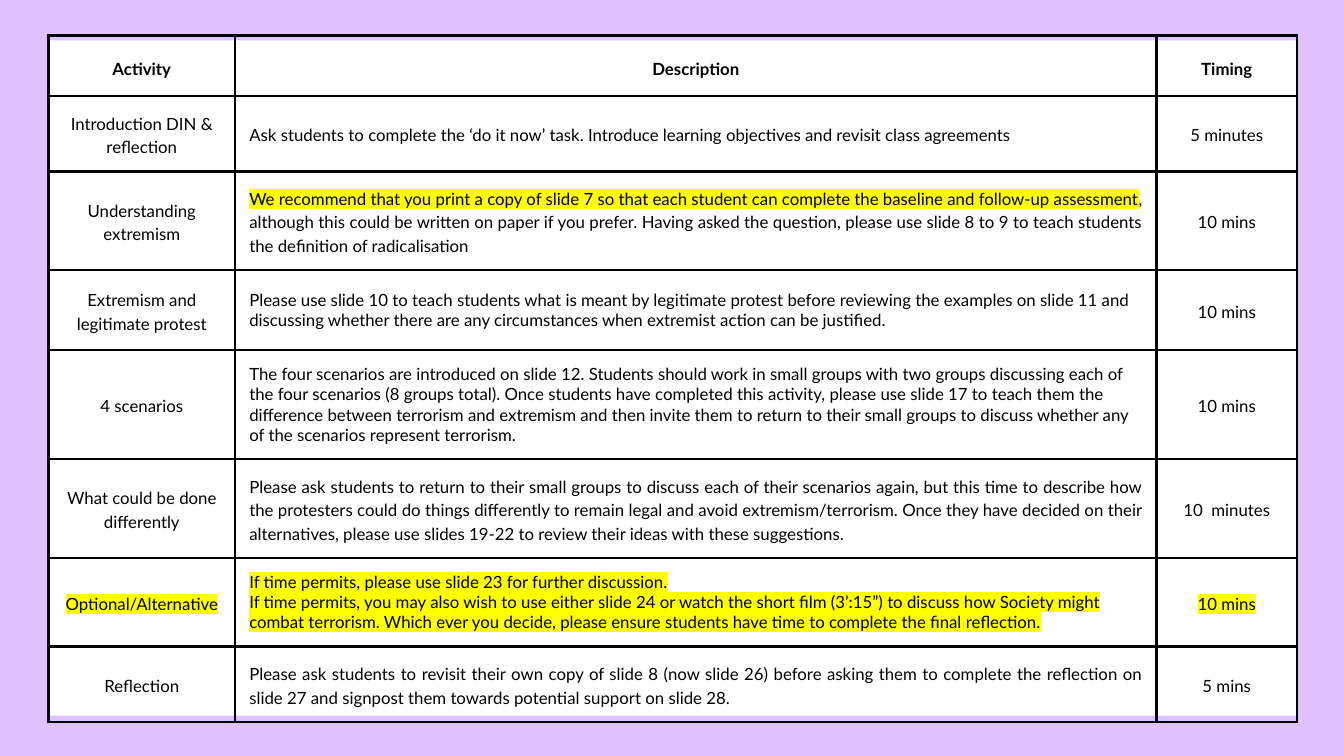
from dataclasses import dataclass
from lxml.etree import SubElement
from pptx import Presentation
from pptx.dml.color import RGBColor
from pptx.enum.shapes import MSO_SHAPE
from pptx.enum.text import MSO_ANCHOR, PP_ALIGN
from pptx.oxml import parse_xml
from pptx.oxml.ns import nsdecls, qn
from pptx.util import Inches, Pt


@dataclass(frozen=True)
class Theme:
    back: str = "E0C1FF"
    panel: str = "FFFFFF"
    ink: str = "000000"
    mark: str = "FFFF00"
    font: str = "Lato"
    size: float = 18
    head_gap: float = 28
    body_gap: float = 25.2
    rule: float = 3
    inset: float = 0.21


THEME = Theme()
WIDTH, HEIGHT = 20, 11.25
PANEL = (0.7, 0.6, 18.6, 10.05)
GRID = (0.72, 0.53, 18.58, 10.07)
COLS = (2.78, 13.71, 2.09)
HEAD, LOW, HIGH = 0.9, 0.85, 1.19
MID, LEFT, FULL = PP_ALIGN.CENTER, PP_ALIGN.LEFT, PP_ALIGN.JUSTIFY

# Row height, alignment of the description, then the three cells.
# Text between asterisks is highlighted.
PLAN = [
    (HEAD, MID, "Activity", "Description", "Timing"),
    (LOW, FULL, "Introduction DIN & reflection",
     "Ask students to complete the ‘do it now’ task. Introduce learning "
     "objectives and revisit class agreements", "5 minutes"),
    (LOW, FULL, "Understanding extremism",
     "*We recommend that you print a copy of slide 7 so that each student can "
     "complete the baseline and follow-up assessment*, although this could be "
     "written on paper if you prefer. Having asked the question, please use "
     "slide 8 to 9 to teach students the definition of radicalisation",
     "10 mins"),
    (HIGH, LEFT, "Extremism and legitimate protest",
     "Please use slide 10 to teach students what is meant by legitimate "
     "protest before reviewing the examples on slide 11 and discussing whether "
     "there are any circumstances when extremist action can be justified.",
     "10 mins"),
    (HIGH, LEFT, "4 scenarios",
     "The four scenarios are introduced on slide 12. Students should work in "
     "small groups with two groups discussing each of the four scenarios (8 "
     "groups total). Once students have completed this activity, please use "
     "slide 17 to teach them the difference between terrorism and extremism "
     "and then invite them to return to their small groups to discuss whether "
     "any of the scenarios represent terrorism.", "10 mins"),
    (HIGH, FULL, "What could be done differently",
     "Please ask students to return to their small groups to discuss each of "
     "their scenarios again, but this time to describe how the protesters "
     "could do things differently to remain legal and avoid "
     "extremism/terrorism. Once they have decided on their alternatives, "
     "please use slides 19-22 to review their ideas with these suggestions.",
     "10  minutes"),
    (LOW, LEFT, "*Optional/Alternative*",
     "*If time permits, please use slide 23 for further discussion.*\n"
     "*If time permits, you may also wish to use either slide 24 or watch the "
     "short film (3’:15”) to discuss how Society might combat terrorism. Which "
     "ever you decide, please ensure students have time to complete the final "
     "reflection.*", "*10 mins*"),
    (LOW, FULL, "Reflection",
     "Please ask students to revisit their own copy of slide 8 (now slide 26) "
     "before asking them to complete the reflection on slide 27 and signpost "
     "them towards potential support on slide 28.", "5 mins"),
]


def paint(fill, color):
    fill.solid()
    fill.fore_color.rgb = RGBColor.from_string(color)


def mark(run):
    """Highlight a run whose font is already set."""
    glow = parse_xml(f'<a:highlight {nsdecls("a")}>'
                     f'<a:srgbClr val="{THEME.mark}"/></a:highlight>')
    run.font._element.find(qn("a:latin")).addprevious(glow)


def write(para, text, bold):
    for i, part in enumerate(text.split("*")):
        if not part:
            continue
        run = para.add_run()
        run.text = part
        font = run.font
        font.name, font.size, font.bold = THEME.font, Pt(THEME.size), bold
        paint(font.fill, THEME.ink)
        if i % 2:
            mark(run)


def rule(cell):
    """Draw all four borders of a cell."""
    props = cell._tc.get_or_add_tcPr()
    for side in "LRTB":
        line = SubElement(props, qn(f"a:ln{side}"), w=str(Pt(THEME.rule)))
        fill = SubElement(line, qn("a:solidFill"))
        SubElement(fill, qn("a:srgbClr"), val=THEME.ink)


def fill_cell(cell, text, align, head):
    rule(cell)
    cell.fill.background()
    cell.vertical_anchor = MSO_ANCHOR.MIDDLE
    cell.margin_left = cell.margin_right = Inches(THEME.inset)
    cell.margin_top = cell.margin_bottom = Inches(THEME.inset)
    frame = cell.text_frame
    for i, line in enumerate(text.split("\n")):
        para = frame.add_paragraph() if i else frame.paragraphs[0]
        para.alignment = align
        if align != LEFT:
            para.line_spacing = Pt(THEME.head_gap if head else THEME.body_gap)
        write(para, line, head)


def add_panel(slide, box):
    panel = slide.shapes.add_shape(MSO_SHAPE.RECTANGLE, *map(Inches, box))
    panel.shadow.inherit = False
    paint(panel.fill, THEME.panel)
    panel.line.fill.background()


def add_plan(slide, box):
    frame = slide.shapes.add_table(len(PLAN), len(COLS), *map(Inches, box))
    table = frame.table
    table.first_row = table.horz_banding = False
    for col, share in zip(table.columns, COLS):
        col.width = Inches(box[2] * share / sum(COLS))
    for r, (tall, align, *texts) in enumerate(PLAN):
        table.rows[r].height = Inches(tall)
        for c, (text, side) in enumerate(zip(texts, (MID, align, MID))):
            fill_cell(table.cell(r, c), text, side, r == 0)
    frame.height = Inches(box[3])


def main():
    deck = Presentation()
    deck.slide_width, deck.slide_height = Inches(WIDTH), Inches(HEIGHT)
    slide = deck.slides.add_slide(deck.slide_layouts[6])
    paint(slide.background.fill, THEME.back)
    add_panel(slide, PANEL)
    add_plan(slide, GRID)
    deck.save("out.pptx")


if __name__ == "__main__":
    main()
